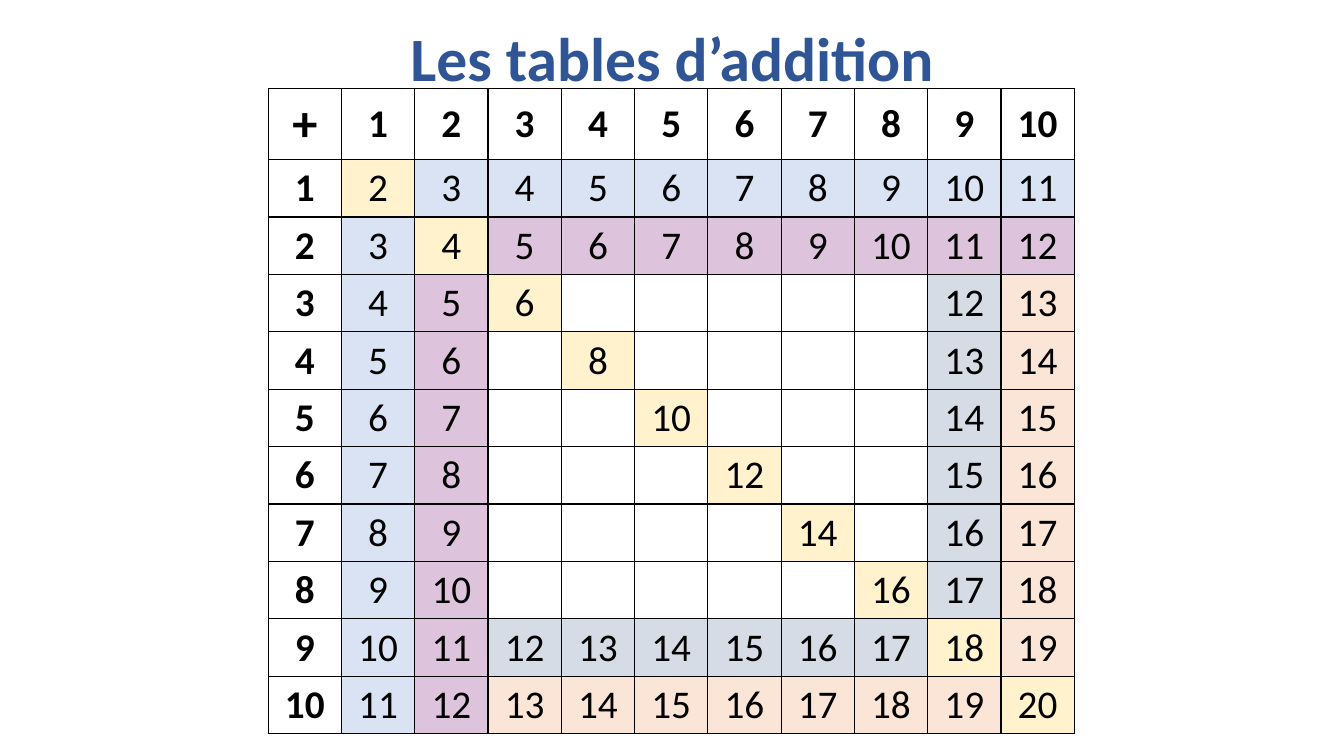
import pptx
import pptx.dml.color
import pptx.enum.text
import pptx.oxml.ns
import pptx.util
from lxml import etree

WIDE, HIGH = 13.33, 7.5
SIZE = 11
FONT = "Calibri"
HUES = {
    "title": "2F5597",
    "ink": "000000",
    "head": "FFFFFF",
    "double": "FFF2CC",
    "one": "DAE3F3",
    "two": "DEC3DC",
    "nine": "D6DCE5",
    "ten": "FBE5D6",
}


def color(name):
    """Return the named colour."""
    return pptx.dml.color.RGBColor.from_string(HUES[name])


def style(para, size, bold, hue):
    """Centre a paragraph and set its font."""
    para.alignment = pptx.enum.text.PP_ALIGN.CENTER
    font = para.font
    font.name, font.size, font.bold = FONT, pptx.util.Pt(size), bold
    font.color.rgb = color(hue)


def border(cell):
    """Draw a thin black line on each side of a cell."""
    props = cell._tc.get_or_add_tcPr()
    qn = pptx.oxml.ns.qn
    for side in ("a:lnL", "a:lnR", "a:lnT", "a:lnB"):
        line = etree.SubElement(props, qn(side), w=str(pptx.util.Pt(1)))
        fill = etree.SubElement(line, qn("a:solidFill"))
        etree.SubElement(fill, qn("a:srgbClr"), val=HUES["ink"])


def shade(row, col):
    """Return the colour name for a cell, or None if it is left to fill in."""
    low, top = min(row, col), max(row, col)
    if low == 0:
        return "head"
    if row == col:
        return "double"
    return {1: "one", 2: "two"}.get(low) or {9: "nine", 10: "ten"}.get(top)


def title(slide, box):
    """Place the slide title in its box."""
    frame = slide.shapes.add_textbox(*map(pptx.util.Inches, box)).text_frame
    frame.word_wrap = True
    frame.vertical_anchor = pptx.enum.text.MSO_ANCHOR.MIDDLE
    para = frame.paragraphs[0]
    para.text = "Les tables d’addition"
    para.line_spacing = 0.9
    style(para, 44, True, "title")


def sums(slide, box):
    """Place the addition table, with one taller header row, in its box."""
    grid = slide.shapes.add_table(SIZE, SIZE, *map(pptx.util.Inches, box)).table
    grid.first_row = grid.horz_banding = False
    wide, high = box[2:]
    first = 0.11 * high
    rest = (high - first) / (SIZE - 1)
    for num in range(SIZE):
        grid.columns[num].width = pptx.util.Inches(wide / SIZE)
        grid.rows[num].height = pptx.util.Inches(rest if num else first)
    for row in range(SIZE):
        for col in range(SIZE):
            cell = grid.cell(row, col)
            cell.vertical_anchor = pptx.enum.text.MSO_ANCHOR.MIDDLE
            border(cell)
            hue = shade(row, col)
            para = cell.text_frame.paragraphs[0]
            if hue:
                cell.fill.solid()
                cell.fill.fore_color.rgb = color(hue)
                para.text = str(row + col) if row + col else "+"
            else:
                cell.fill.background()
            style(para, 28 if row + col else 36, hue == "head", "ink")


def main():
    """Build the slide and save it."""
    deck = pptx.Presentation()
    deck.slide_width = pptx.util.Inches(WIDE)
    deck.slide_height = pptx.util.Inches(HIGH)
    slide = deck.slides.add_slide(deck.slide_layouts[6])
    title(slide, (0.92, -0.11, 11.5, 1.45))
    sums(slide, (2.66, 0.88, 0.6 * WIDE, 6.4))
    deck.save("out.pptx")


if __name__ == "__main__":
    main()
